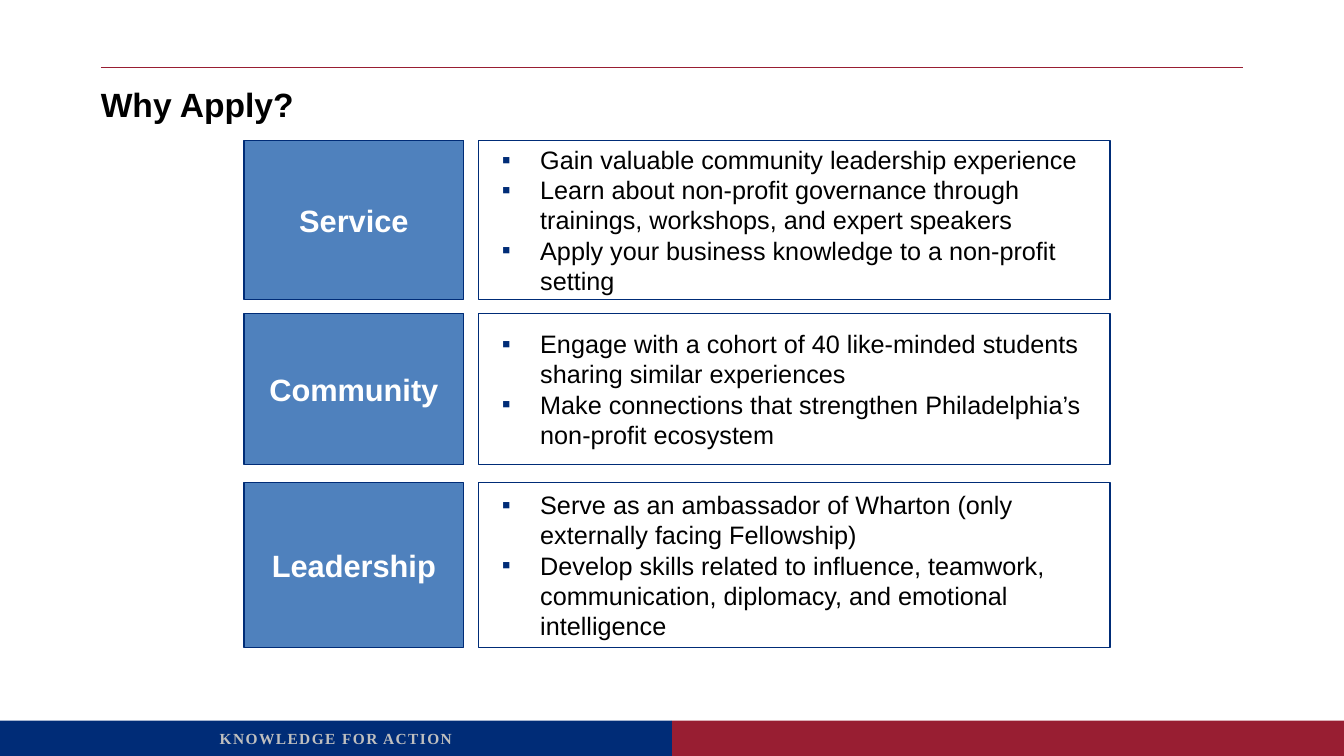
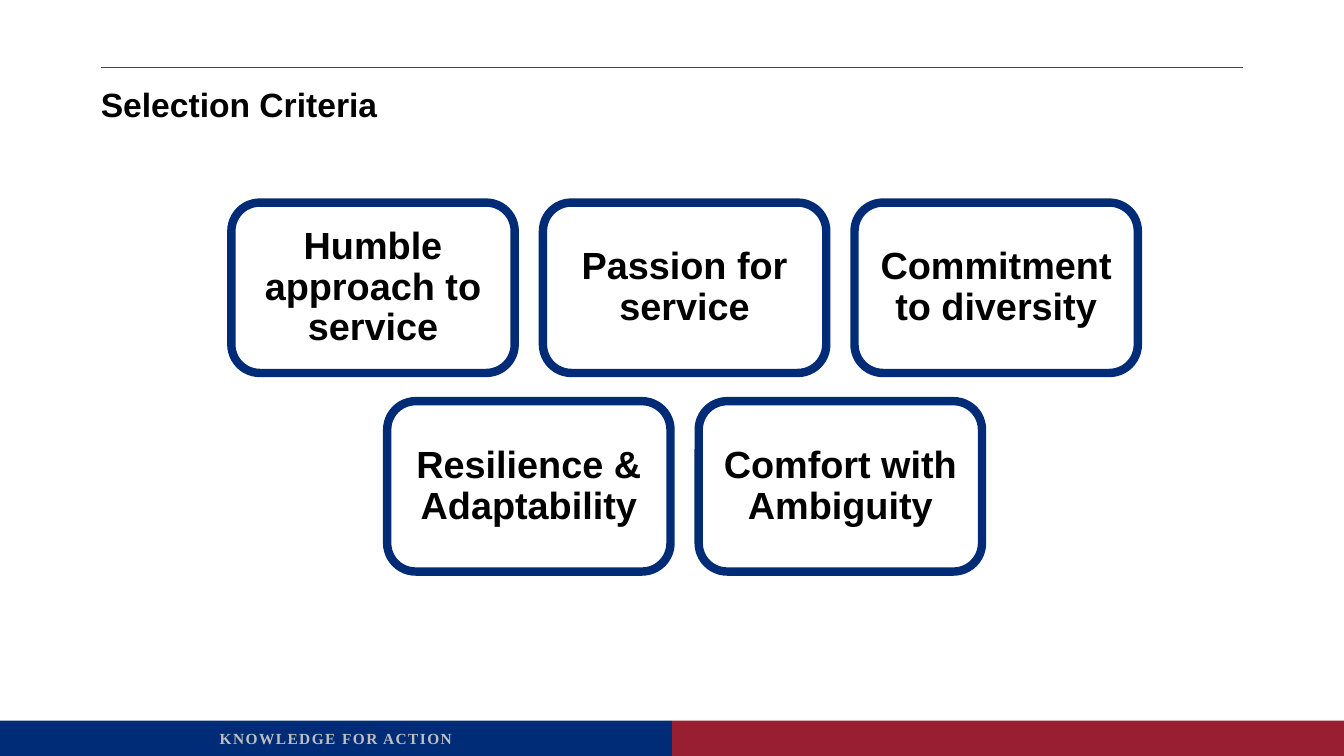
from dataclasses import dataclass

from lxml.etree import SubElement
from pptx import Presentation
from pptx.dml.color import RGBColor
from pptx.enum.shapes import MSO_CONNECTOR as Connector, MSO_SHAPE as Preset
from pptx.enum.text import MSO_ANCHOR as Anchor, PP_ALIGN as Align
from pptx.oxml.ns import qn
from pptx.util import Inches, Pt


@dataclass(frozen=True)
class Theme:
    navy: str = "002C77"
    crimson: str = "981E32"
    steel: str = "4F81BD"
    silver: str = "BFBFBF"
    white: str = "FFFFFF"
    black: str = "000000"
    sans: str = "Arial"
    serif: str = "Times New Roman"
    footer_size: int = 11
    detail_size: int = 18
    label_size: int = 22
    title_size: int = 24
    card_size: int = 27


THEME = Theme()
SLIDE_WIDTH, SLIDE_HEIGHT = 13.33, 7.5
MARGIN = 1
CONTENT_WIDTH = SLIDE_WIDTH - 2 * MARGIN

# Benefit rows: label, top, height, bullet points
BENEFITS = [
    ("Service", 1.39, 1.58, [
        "Gain valuable community leadership experience",
        "Learn about non-profit governance through trainings, workshops, and expert speakers",
        "Apply your business knowledge to a non-profit setting",
    ]),
    ("Community", 3.11, 1.5, [
        "Engage with a cohort of 40 like-minded students sharing similar experiences",
        "Make connections that strengthen Philadelphia’s non-profit ecosystem",
    ]),
    ("Leadership", 4.79, 1.63, [
        "Serve as an ambassador of Wharton (only externally facing Fellowship)",
        "Develop skills related to influence, teamwork, communication, diplomacy, "
        "and emotional intelligence",
    ]),
]
LABEL_LEFT, LABEL_WIDTH = 2.42, 2.18
DETAIL_LEFT, DETAIL_WIDTH = 4.75, 6.26

# Criteria cards, one list per row
CRITERIA = [
    ["Humble approach to service", "Passion for service", "Commitment to diversity"],
    ["Resilience & Adaptability", "Comfort with Ambiguity"],
]
CARD_WIDTH, CARD_HEIGHT, CARD_GAP = 2.81, 1.69, 0.28
CARDS_CENTER, CARDS_TOP = 6.79, 2.01


def add_bullet(paragraph):
    properties = paragraph._p.get_or_add_pPr()
    properties.set("marL", str(Inches(0.51)))
    properties.set("indent", str(Inches(-0.38)))
    color = SubElement(properties, qn("a:buClr"))
    SubElement(color, qn("a:srgbClr"), val=THEME.navy)
    SubElement(properties, qn("a:buFont"), typeface=THEME.sans)
    SubElement(properties, qn("a:buChar"), char="▪")


def write(shape, texts, size, color=THEME.black, bold=True, name=THEME.sans,
          align=Align.CENTER, anchor=Anchor.MIDDLE, insets=(0, 0, 0, 0),
          bullets=False, line_spacing=None):
    """Fill a shape with paragraphs of one style; insets are left, top, right, bottom."""
    frame = shape.text_frame
    frame.word_wrap = True
    frame.vertical_anchor = anchor
    (frame.margin_left, frame.margin_top,
     frame.margin_right, frame.margin_bottom) = map(Inches, insets)
    for index, text in enumerate(texts):
        paragraph = frame.paragraphs[0] if index == 0 else frame.add_paragraph()
        paragraph.text = text
        if bullets:
            add_bullet(paragraph)
        paragraph.alignment = align
        paragraph.line_spacing = line_spacing
        font = paragraph.font
        font.name, font.size, font.bold = name, Pt(size), bold
        font.color.rgb = RGBColor.from_string(color)


def add_box(slide, left, top, width, height, preset=Preset.RECTANGLE,
            fill=None, line=None, weight=0.75):
    shape = slide.shapes.add_shape(
        preset, Inches(left), Inches(top), Inches(width), Inches(height))
    shape.shadow.inherit = False
    if fill:
        shape.fill.solid()
        shape.fill.fore_color.rgb = RGBColor.from_string(fill)
    else:
        shape.fill.background()
    if line:
        shape.line.color.rgb = RGBColor.from_string(line)
        shape.line.width = Pt(weight)
    else:
        shape.line.fill.background()
    return shape


def add_textbox(slide, left, top, width, height):
    return slide.shapes.add_textbox(
        Inches(left), Inches(top), Inches(width), Inches(height))


def add_rule(slide, left, top, width):
    rule = slide.shapes.add_connector(
        Connector.STRAIGHT, Inches(left), Inches(top), Inches(left + width), Inches(top))
    rule.line.color.rgb = RGBColor.from_string(THEME.crimson)
    rule.line.width = Pt(0.5)
    SubElement(rule._element.spPr, qn("a:effectLst"))


def add_footer(slide):
    half, height = SLIDE_WIDTH / 2, 0.35
    top = SLIDE_HEIGHT - height
    add_box(slide, half, top, half, height, fill=THEME.crimson)
    add_box(slide, 0, top, half, height, fill=THEME.navy)
    motto = add_textbox(slide, 0, 7.18, half, 0.29)
    write(motto, ["KNOWLEDGE FOR ACTION"], THEME.footer_size, THEME.silver,
          name=THEME.serif, anchor=Anchor.TOP, insets=(0.1, 0.05, 0.1, 0.05))
    run = motto.text_frame.paragraphs[0].runs[0]
    run._r.get_or_add_rPr().set("spc", "100")


def add_slide(presentation, title):
    """Start a slide with the shared footer, rule and title."""
    slide = presentation.slides.add_slide(presentation.slide_layouts[6])
    add_footer(slide)
    add_rule(slide, MARGIN, 0.67, CONTENT_WIDTH)
    heading = add_textbox(slide, MARGIN, 0.83, CONTENT_WIDTH, 0.83)
    write(heading, [title], THEME.title_size, align=Align.LEFT, anchor=Anchor.TOP)
    return slide


def add_benefit(slide, label, top, height, points):
    label_box = add_box(slide, LABEL_LEFT, top, LABEL_WIDTH, height,
                        fill=THEME.steel, line=THEME.navy)
    write(label_box, [label], THEME.label_size, THEME.white)
    detail_box = add_box(slide, DETAIL_LEFT, top, DETAIL_WIDTH, height, line=THEME.navy)
    write(detail_box, points, THEME.detail_size, bold=False, align=Align.LEFT,
          insets=(0.1, 0, 0, 0), bullets=True)


def add_card_row(slide, top, criteria):
    """Centre one row of equal cards."""
    pitch = CARD_WIDTH + CARD_GAP
    left = CARDS_CENTER - (len(criteria) * pitch - CARD_GAP) / 2
    for column, criterion in enumerate(criteria):
        card = add_box(slide, left + column * pitch, top, CARD_WIDTH, CARD_HEIGHT,
                       Preset.ROUNDED_RECTANGLE, line=THEME.navy, weight=6)
        write(card, [criterion], THEME.card_size, insets=(0.14,) * 4, line_spacing=0.9)


def main():
    presentation = Presentation()
    presentation.slide_width = Inches(SLIDE_WIDTH)
    presentation.slide_height = Inches(SLIDE_HEIGHT)

    # Reasons to apply
    slide = add_slide(presentation, "Why Apply?")
    for benefit in BENEFITS:
        add_benefit(slide, *benefit)

    # Selection criteria
    slide = add_slide(presentation, "Selection Criteria")
    for row, criteria in enumerate(CRITERIA):
        add_card_row(slide, CARDS_TOP + row * (CARD_HEIGHT + CARD_GAP), criteria)

    presentation.save("out.pptx")


if __name__ == "__main__":
    main()
